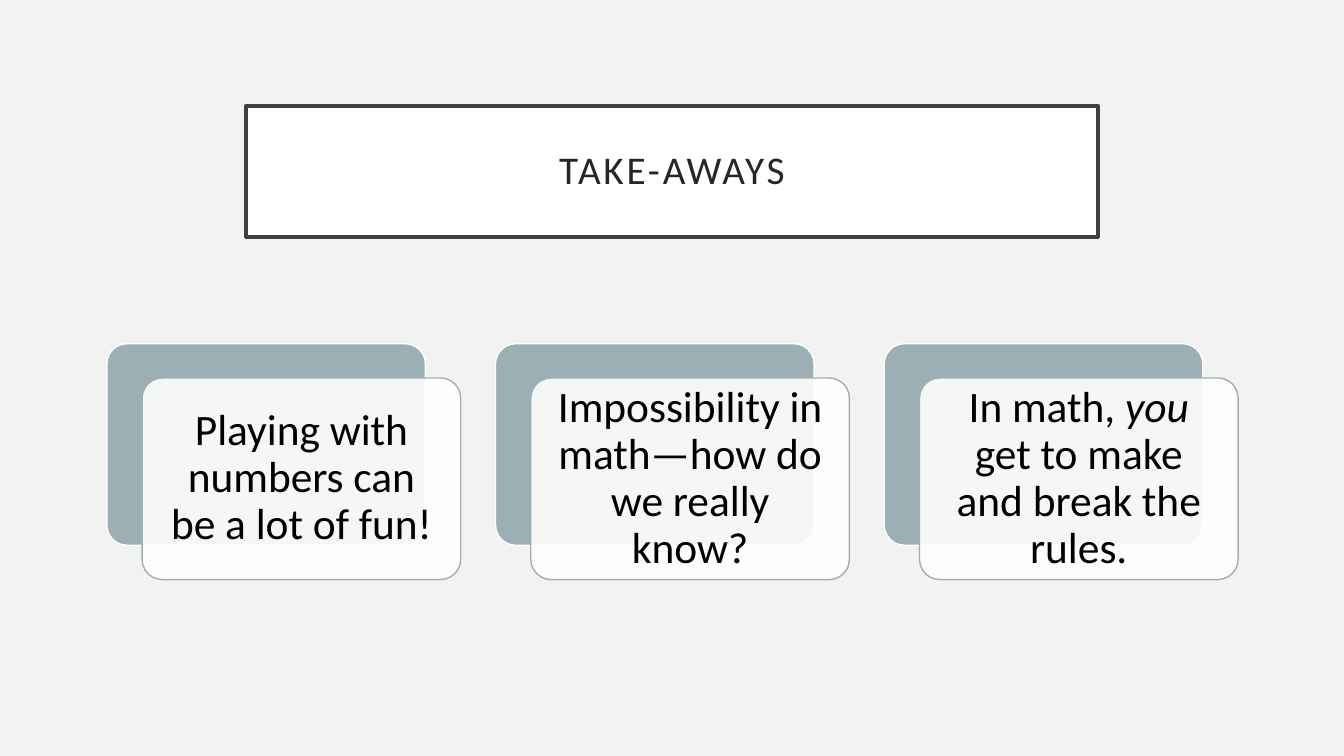
from pptx import Presentation
from pptx.dml.color import RGBColor
from pptx.enum import shapes, text
from pptx.oxml.ns import qn
from pptx.util import Inches, Pt
from lxml import etree

PAPER = RGBColor(0xF2, 0xF2, 0xF2)
WHITE = RGBColor(0xFF, 0xFF, 0xFF)
BLACK = RGBColor(0, 0, 0)
INK = RGBColor(0x26, 0x26, 0x26)
FRAME = RGBColor(0x40, 0x40, 0x40)
TEAL = RGBColor(0x9B, 0xAF, 0xB5)


def style(frame, size, color, inset):
    frame.word_wrap = True
    frame.auto_size = text.MSO_AUTO_SIZE.NONE
    frame.vertical_anchor = text.MSO_ANCHOR.MIDDLE
    frame.margin_left = frame.margin_right = Inches(inset)
    frame.margin_top = frame.margin_bottom = Inches(inset)
    para = frame.paragraphs[0]
    para.alignment = text.PP_ALIGN.CENTER
    para.line_spacing = 0.9
    for run in para.runs:
        run.font.name = "Calibri"
        run.font.size = Pt(size)
        run.font.color.rgb = color


def add_card(left, top, fill, line):
    card = slide.shapes.add_shape(
        shapes.MSO_SHAPE.ROUNDED_RECTANGLE,
        Inches(left), Inches(top), Inches(3.16), Inches(2))
    card.adjustments[0] = 0.1
    card.shadow.inherit = False
    card.fill.solid()
    card.fill.fore_color.rgb = fill
    card.line.color.rgb = line
    card.line.width = Pt(1)
    return card


deck = Presentation()
deck.slide_width = Inches(13.33)
deck.slide_height = Inches(7.5)
slide = deck.slides.add_slide(deck.slide_layouts[5])
slide.background.fill.solid()
slide.background.fill.fore_color.rgb = PAPER

title = slide.shapes.title
title.left, title.top = Inches(2.44), Inches(1.05)
title.width, title.height = Inches(8.45), Inches(1.3)
title.fill.solid()
title.fill.fore_color.rgb = WHITE
title.line.color.rgb = FRAME
title.line.width = Pt(2.5)
title.text_frame.text = "TAKE-AWAYS"
style(title.text_frame, 28, INK, 0.2)
title.text_frame.paragraphs[0].runs[0].font._element.set("spc", "200")

points = [
    ["Playing with numbers can be a lot of fun!"],
    ["Impossibility in math—how do we really know?"],
    ["In math, ", "you", " get to make and break the rules."],
]
for i, parts in enumerate(points):
    left = 1.06 + 3.855 * i
    add_card(left, 3.41, TEAL, WHITE)
    card = add_card(left + 0.35, 3.75, WHITE, TEAL)
    tint = card.fill._xPr.find(qn("a:solidFill"))[0]
    etree.SubElement(tint, qn("a:alpha")).set("val", "90000")
    para = card.text_frame.paragraphs[0]
    for part in parts:
        run = para.add_run()
        run.text = part
        run.font.italic = part == "you"
    style(card.text_frame, 31, BLACK, 0.13)

deck.save("out.pptx")
